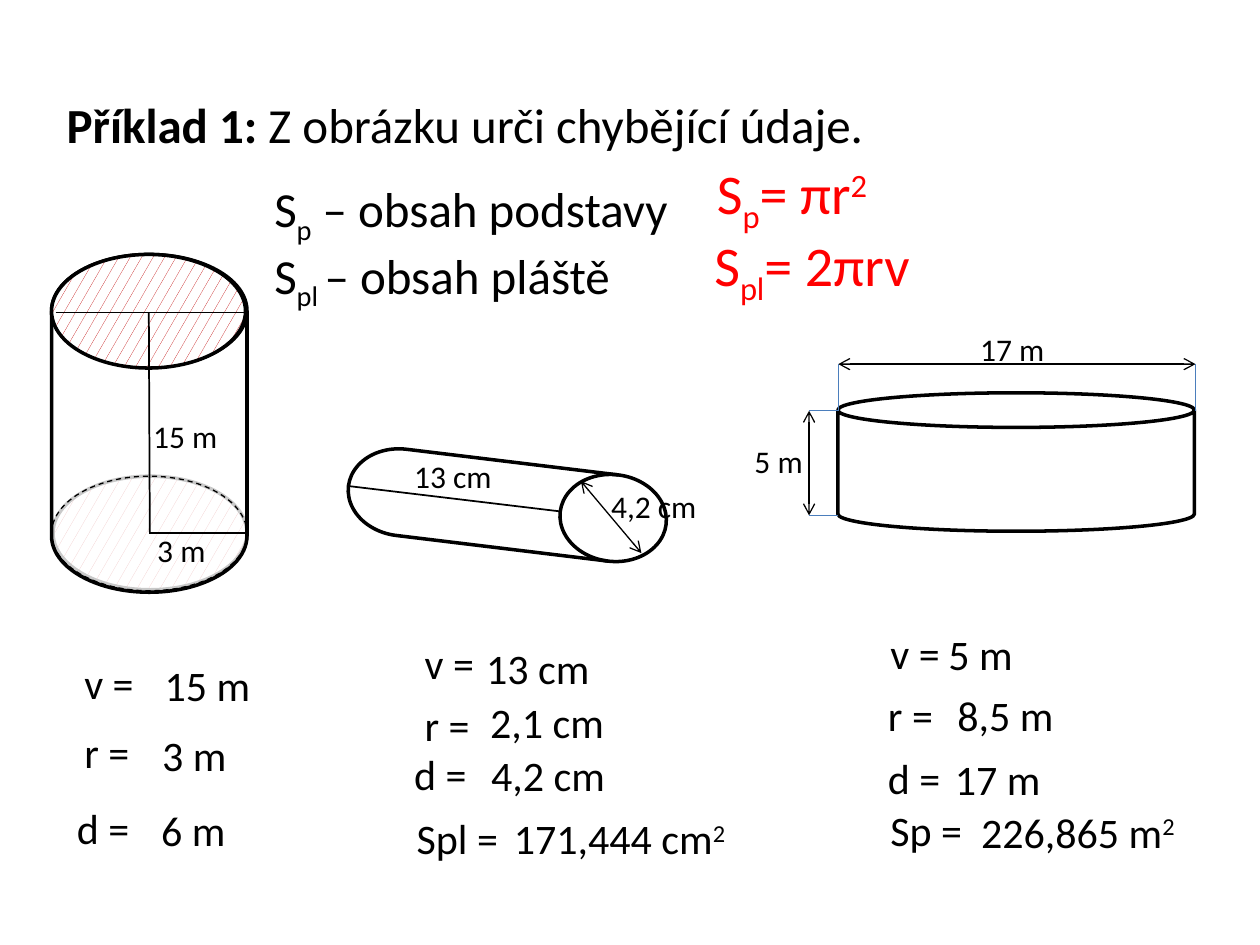
from dataclasses import dataclass
from typing import Optional

from pptx import Presentation
from pptx import util as u
from pptx.dml.color import RGBColor
from pptx.enum import dml, shapes, text
from pptx.oxml import parse_xml
from pptx.oxml.ns import nsdecls, qn

BLACK, WHITE, RED, BLUE, HATCH = "000000", "FFFFFF", "FF0000", "4B7EBC", "C00000"
FONT = "Calibri"
BASELINES = {"_": "-25000", "^": "30000"}
Kind = shapes.MSO_SHAPE


@dataclass
class Solid:
    kind: Kind
    left: float
    top: float
    width: float
    height: float
    fill: str = "none"  # none, veil or hatch
    weight: float = 2
    dashed: bool = False
    rotation: float = 0


@dataclass
class Segment:
    start: tuple
    end: tuple
    color: str = BLACK
    weight: float = 0.75
    arrows: bool = False


@dataclass
class Label:
    """Parts of a line are split by |; _ lowers a part and ^ raises it."""
    left: float
    top: float
    width: float
    lines: tuple
    size: int = 24
    color: str = BLACK
    wrap: bool = True


def rgb(value: str) -> RGBColor:
    return RGBColor.from_string(value)


def style_run(run, size: int, color: str, bold: Optional[bool] = None) -> None:
    for key, value in {"name": FONT, "size": u.Pt(size), "bold": bold}.items():
        setattr(run.font, key, value)
    run.font.color.rgb = rgb(color)


def draw_solid(slide, solid: Solid) -> None:
    box = (u.Cm(v) for v in (solid.left, solid.top, solid.width, solid.height))
    shape = slide.shapes.add_shape(solid.kind, *box)
    shape.shadow.inherit = False
    shape.rotation = solid.rotation
    shape.line.color.rgb = rgb(BLACK)
    shape.line.width = u.Pt(solid.weight)
    if solid.dashed:
        shape.line.dash_style = dml.MSO_LINE.DASH
    if solid.fill == "none":
        shape.fill.background()
    elif solid.fill == "hatch":
        shape.fill.patterned()
        shape.fill.pattern = dml.MSO_PATTERN.SMALL_CONFETTI
        shape.fill.fore_color.rgb = rgb(HATCH)
        shape.fill.back_color.rgb = rgb(WHITE)
    else:
        shape.fill.solid()
        shape.fill.fore_color.rgb = rgb(WHITE)
        tint = shape.element.spPr.find(qn("a:solidFill"))[0]
        tint.append(parse_xml(f'<a:alpha {nsdecls("a")} val="79000"/>'))


def draw_segment(slide, segment: Segment) -> None:
    ends = (u.Cm(v) for v in segment.start + segment.end)
    line = slide.shapes.add_connector(shapes.MSO_CONNECTOR.STRAIGHT, *ends)
    line.line.color.rgb = rgb(segment.color)
    line.line.width = u.Pt(segment.weight)
    if segment.arrows:
        for end in ("headEnd", "tailEnd"):
            line.line._get_or_add_ln().append(
                parse_xml(f'<a:{end} {nsdecls("a")} type="arrow"/>'))
    line.element.spPr.append(parse_xml(f'<a:effectLst {nsdecls("a")}/>'))


def draw_label(slide, label: Label) -> None:
    height = label.size * 0.051 * len(label.lines)
    box = (u.Cm(v) for v in (label.left, label.top, label.width, height))
    frame = slide.shapes.add_textbox(*box).text_frame
    frame.word_wrap = label.wrap
    frame.auto_size = text.MSO_AUTO_SIZE.SHAPE_TO_FIT_TEXT
    for index, line in enumerate(label.lines):
        paragraph = frame.add_paragraph() if index else frame.paragraphs[0]
        for part in line.split("|"):
            run = paragraph.add_run()
            run.text = part.lstrip("_^")
            style_run(run, label.size, label.color)
            if part[0] in BASELINES:
                run.font._element.set("baseline", BASELINES[part[0]])


def draw_title(slide) -> None:
    title = slide.shapes.title
    place = {"left": 1.09, "top": 1.73, "width": 22.86, "height": 1.55}
    for key, value in place.items():
        setattr(title, key, u.Cm(value))
    title.text_frame.vertical_anchor = text.MSO_ANCHOR.MIDDLE
    paragraph = title.text_frame.paragraphs[0]
    paragraph.alignment = text.PP_ALIGN.LEFT
    for words, bold in (("Příklad 1: ", True),
                        ("Z obrázku urči chybějící údaje.", False)):
        run = paragraph.add_run()
        run.text = words
        style_run(run, 28, BLACK, bold)


# Cylinders: upright, lying and flat
SOLIDS = [
    Solid(Kind.OVAL, 1.07, 9.6, 3.91, 2.29, "hatch"),
    Solid(Kind.FLOWCHART_MAGNETIC_DISK, 1.04, 5.13, 3.94, 6.81, "veil"),
    Solid(Kind.OVAL, 1.04, 5.13, 3.91, 2.29, "hatch"),
    Solid(Kind.OVAL, 1.04, 9.6, 3.94, 2.31, weight=0.75, dashed=True),
    Solid(Kind.FLOWCHART_MAGNETIC_DISK, 9.35, 6.96, 1.75, 6.45, "veil",
          rotation=96.9),
    Solid(Kind.CAN, 16.89, 7.92, 7.19, 2.79),
]

# Axes and radii, then the dimension lines of the flat cylinder
POOL_LEFT, POOL_RIGHT, POOL_TOP, POOL_BOTTOM = 16.9, 24.1, 8.28, 10.39
DIM_X, DIM_Y = 16.31, 7.34
SEGMENTS = [
    Segment((1.12, 6.3), (4.93, 6.3), weight=1),
    Segment((3, 10.74), (4.98, 10.74), weight=1),
    Segment((3, 6.3), (3.02, 10.72), weight=1),
    Segment((11.3, 10.31), (7.04, 9.8), weight=1),
    Segment((11.71, 9.7), (12.93, 11.15), arrows=True),
    Segment((POOL_LEFT, DIM_Y), (POOL_RIGHT, DIM_Y), arrows=True),
    Segment((DIM_X, POOL_TOP), (DIM_X, POOL_BOTTOM), arrows=True),
    *(Segment((x, POOL_TOP), (x, DIM_Y), BLUE) for x in (POOL_LEFT, POOL_RIGHT)),
    *(Segment((POOL_LEFT, y), (DIM_X, y), BLUE) for y in (POOL_TOP, POOL_BOTTOM)),
]

LABELS = [
    # Formulas
    Label(5.28, 3.48, 8.61, ("S|_p| – obsah podstavy", "S|_pl |– obsah pláště"), 28),
    Label(14.2, 3.07, 4.52, ("S|_p|= πr|^2",), 32, RED),
    Label(14.15, 4.52, 5.16, ("S|_pl|= 2πrv",), 32, RED),
    # Dimensions in the drawings
    Label(2.84, 8.28, 2.13, ("15 m",), 18),
    Label(2.92, 10.59, 2.13, ("3 m",), 18),
    Label(8.1, 9.09, 2.13, ("13 cm",), 18),
    Label(12.07, 9.7, 2.67, ("4,2 cm",), 18),
    Label(14.96, 8.79, 2.13, ("5 m",), 18),
    Label(19.51, 6.53, 2.13, ("17 m",), 18),
    # Results of the upright cylinder
    Label(1.45, 13.13, 1.57, ("v =",)),
    Label(3.07, 13.18, 2.9, ("15 m",)),
    Label(1.45, 14.53, 1.57, ("r =",)),
    Label(3.02, 14.58, 2.9, ("3 m",)),
    Label(1.3, 16.05, 3.86, ("d =",)),
    Label(3, 16.1, 2.9, ("6 m",)),
    # Results of the lying cylinder
    Label(8.31, 12.73, 3.86, ("v =",)),
    Label(9.55, 12.83, 2.77, ("13 cm",)),
    Label(8.31, 13.97, 3.86, ("r =",)),
    Label(9.63, 13.92, 2.97, ("2,1 cm",)),
    Label(8.1, 14.96, 3.86, ("d =",)),
    Label(9.65, 14.99, 2.97, ("4,2 cm",)),
    Label(8.15, 16.26, 2.79, ("Spl =",)),
    Label(10.11, 16.26, 4.85, ("171,444 cm|^2",), wrap=False),
    # Results of the flat cylinder
    Label(17.7, 12.52, 3.86, ("v =",)),
    Label(18.87, 12.55, 2.24, ("5 m",)),
    Label(17.65, 13.77, 3.86, ("r =",)),
    Label(19.05, 13.77, 2.9, ("8,5 m",)),
    Label(17.65, 15.04, 3.86, ("d =",)),
    Label(19, 15.06, 2.9, ("17 m",)),
    Label(17.7, 16.1, 3.86, ("Sp =",)),
    Label(19.53, 16.13, 4.47, ("226,865 m|^2",), wrap=False),
]


def main() -> None:
    deck = Presentation()
    deck.slide_width, deck.slide_height = u.Cm(25.4), u.Cm(19.05)
    slide = deck.slides.add_slide(deck.slide_layouts.get_by_name("Title Only"))
    draw_title(slide)
    for draw, parts in ((draw_solid, SOLIDS), (draw_segment, SEGMENTS),
                        (draw_label, LABELS)):
        for part in parts:
            draw(slide, part)
    deck.save("out.pptx")


if __name__ == "__main__":
    main()
